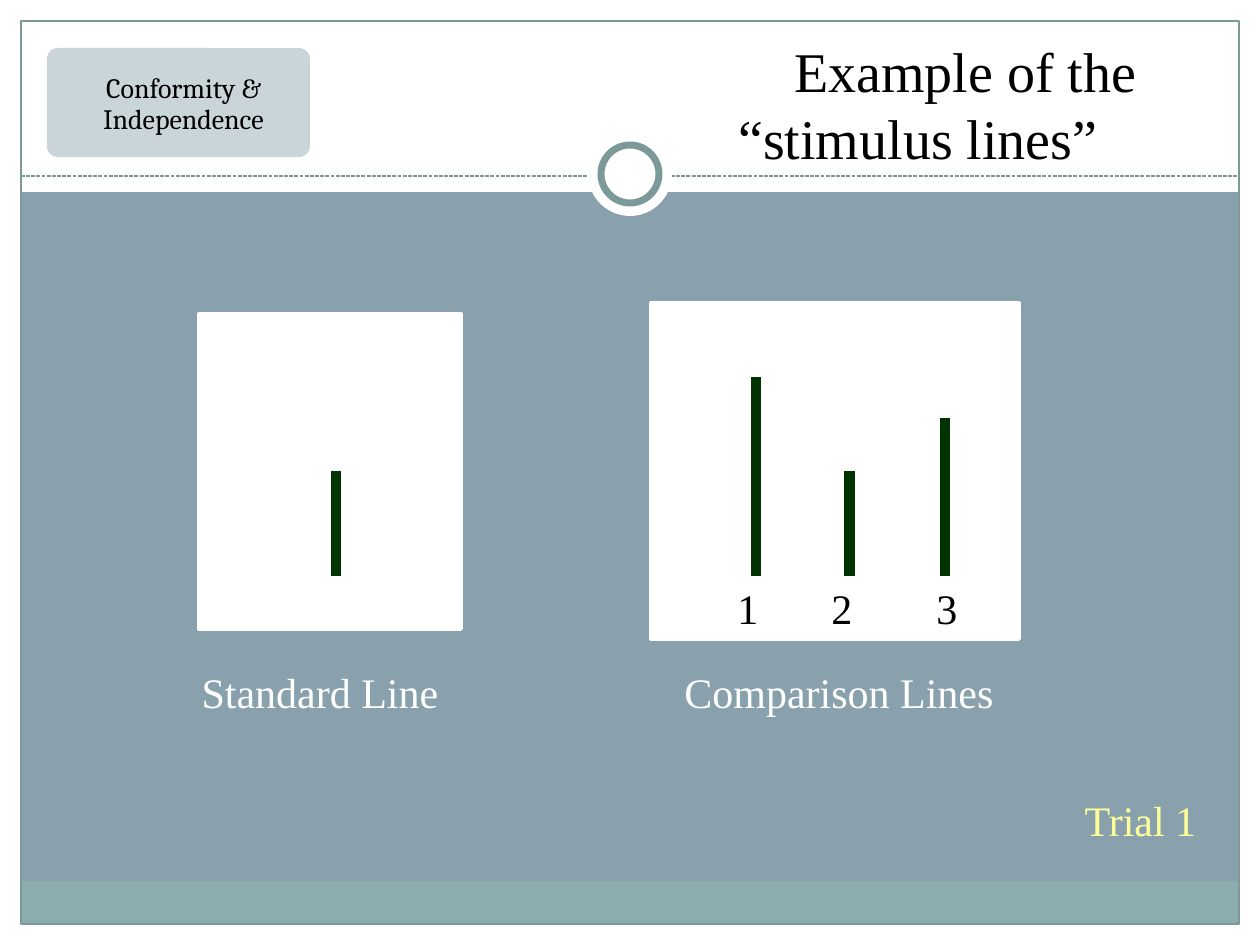
from pptx import Presentation
from pptx.dml.color import RGBColor
from pptx.enum.dml import MSO_LINE
from pptx.enum.shapes import MSO_CONNECTOR, MSO_SHAPE
from pptx.enum.text import MSO_ANCHOR, MSO_AUTO_SIZE, PP_ALIGN
from pptx.oxml.ns import qn
from pptx.util import Pt
from lxml import etree

RECT, ROUND, OVAL = MSO_SHAPE.RECTANGLE, MSO_SHAPE.ROUNDED_RECTANGLE, MSO_SHAPE.OVAL
STRAIGHT, DASH = MSO_CONNECTOR.STRAIGHT, MSO_LINE.SQUARE_DOT
LEFT, CENTER = PP_ALIGN.LEFT, PP_ALIGN.CENTER
MIDDLE = MSO_ANCHOR.MIDDLE
FIT, FIXED = MSO_AUTO_SIZE.SHAPE_TO_FIT_TEXT, MSO_AUTO_SIZE.NONE

W, H = 1260, 945
EMU_PER_PX = 914400 / 126
WHITE, BLACK, SLATE = "FFFFFF", "000000", "88A1AD"
TEAL, BAND, BADGE = "7C999A", "8CADAE", "C5D1D7"
GREEN, YELLOW = "003300", "FFFF99"


def px(n):
    return round(n * EMU_PER_PX)


def color(hex_string):
    return RGBColor.from_string(hex_string)


def set_all(obj, values):
    for name, value in values.items():
        setattr(obj, name, value)


class Deck:
    font = "Times New Roman"
    size = 24

    def __init__(self):
        self.prs = Presentation()
        set_all(self.prs, {"slide_width": px(W), "slide_height": px(H)})

    def new_slide(self, background):
        self.s = self.prs.slides.add_slide(self.prs.slide_layouts[6])
        fill = self.s.background.fill
        fill.solid()
        fill.fore_color.rgb = color(background)

    def shape(self, kind, box, fill=None, line=None, width=0.75):
        sp = self.s.shapes.add_shape(kind, *map(px, box))
        sp.shadow.inherit = False
        if fill:
            sp.fill.solid()
            sp.fill.fore_color.rgb = color(fill)
        else:
            sp.fill.background()
        if line:
            sp.line.color.rgb = color(line)
            sp.line.width = Pt(width)
        else:
            sp.line.fill.background()
        return sp

    def line(self, x1, y1, x2, y2, hex_string, width, dash=None):
        cx = self.s.shapes.add_connector(STRAIGHT, *map(px, (x1, y1, x2, y2)))
        cx.line.color.rgb = color(hex_string)
        set_all(cx.line, {"width": Pt(width), "dash_style": dash})
        etree.SubElement(cx._element.spPr, qn("a:effectLst"))

    def text(self, box, words, hex_string, size=None, font=None, align=CENTER,
             wrap=False, **frame):
        sp = self.s.shapes.add_textbox(*map(px, box))
        tf = sp.text_frame
        set_all(tf, {"word_wrap": wrap, "vertical_anchor": MIDDLE, "auto_size": FIT} | frame)
        p = tf.paragraphs[0]
        p.alignment = align
        r = p.add_run()
        r.text = words
        set_all(r.font, {"size": Pt(size or self.size), "name": font or self.font})
        r.font.color.rgb = color(hex_string)
        return p


def set_opacity(sp, percent):
    rgb = sp.fill._xPr.find(qn("a:solidFill"))[0]
    etree.SubElement(rgb, qn("a:alpha")).set("val", str(percent * 1000))


def set_indent(p, n):
    p._p.get_or_add_pPr().set("indent", str(px(n)))


def set_tabs(p, stops):
    tabs = etree.SubElement(p._p.get_or_add_pPr(), qn("a:tabLst"))
    for stop in stops:
        tab = etree.SubElement(tabs, qn("a:tab"))
        tab.set("pos", str(px(stop)))
        tab.set("algn", "l")


def draw_frame(deck):
    margin, header = 21, 192
    right, bottom = W - margin, H - margin
    for box in ((0, bottom, W, margin), (0, 0, W, header),
                (0, 0, margin, H), (right, 0, margin, H)):
        deck.shape(RECT, box, WHITE)
    deck.shape(RECT, (margin, 881, W - 2 * margin, bottom - 881), BAND)
    deck.shape(RECT, (margin, margin, W - 2 * margin, H - 2 * margin), line=TEAL)
    deck.line(margin, 176, right, 176, TEAL, 0.75, DASH)
    for diameter, outline in ((84, None), (58, TEAL)):
        box = (W // 2 - diameter // 2, 174 - diameter // 2, diameter, diameter)
        deck.shape(OVAL, box, WHITE, outline, 4)


def draw_badge(deck):
    sp = deck.shape(ROUND, (47, 48, 263, 109), BADGE)
    sp.adjustments[0] = 0.1
    set_opacity(sp, 90)
    side, top = px(4), px(3)
    p = deck.text((55, 54, 257, 102), "Conformity & Independence", BLACK, 16, "Cambria",
                  wrap=True, auto_size=FIXED, margin_left=side, margin_right=side,
                  margin_top=top, margin_bottom=top)
    p.line_spacing = 0.9


def draw_stimuli(deck):
    baseline = 576
    for card in ((651, 303, 368, 336), (199, 314, 262, 315)):
        deck.shape(RECT, card, WHITE, WHITE, 2.25)
    for x, top in ((336, 471), (756, 377), (850, 471), (945, 418)):
        deck.line(x, top, x, baseline, GREEN, 6.25)
    numbers = deck.text((725, baseline, 294, 63), "1\t2\t3", BLACK, align=LEFT, wrap=True)
    set_tabs(numbers, (94, 199))
    for left, top, width, words, ink in ((189, 660, 262, "Standard Line", WHITE),
                                         (672, 660, 334, "Comparison Lines", WHITE),
                                         (1071, 788, 139, "Trial 1", YELLOW)):
        deck.text((left, top, width, 63), words, ink)


def main():
    deck = Deck()
    deck.new_slide(SLATE)
    draw_frame(deck)
    title = deck.text((726, 29, 504, 149), "Example of the “stimulus lines”", BLACK, 32,
                      align=LEFT, wrap=True)
    set_indent(title, 56)
    draw_stimuli(deck)
    draw_badge(deck)
    deck.prs.save("out.pptx")


if __name__ == "__main__":
    main()
